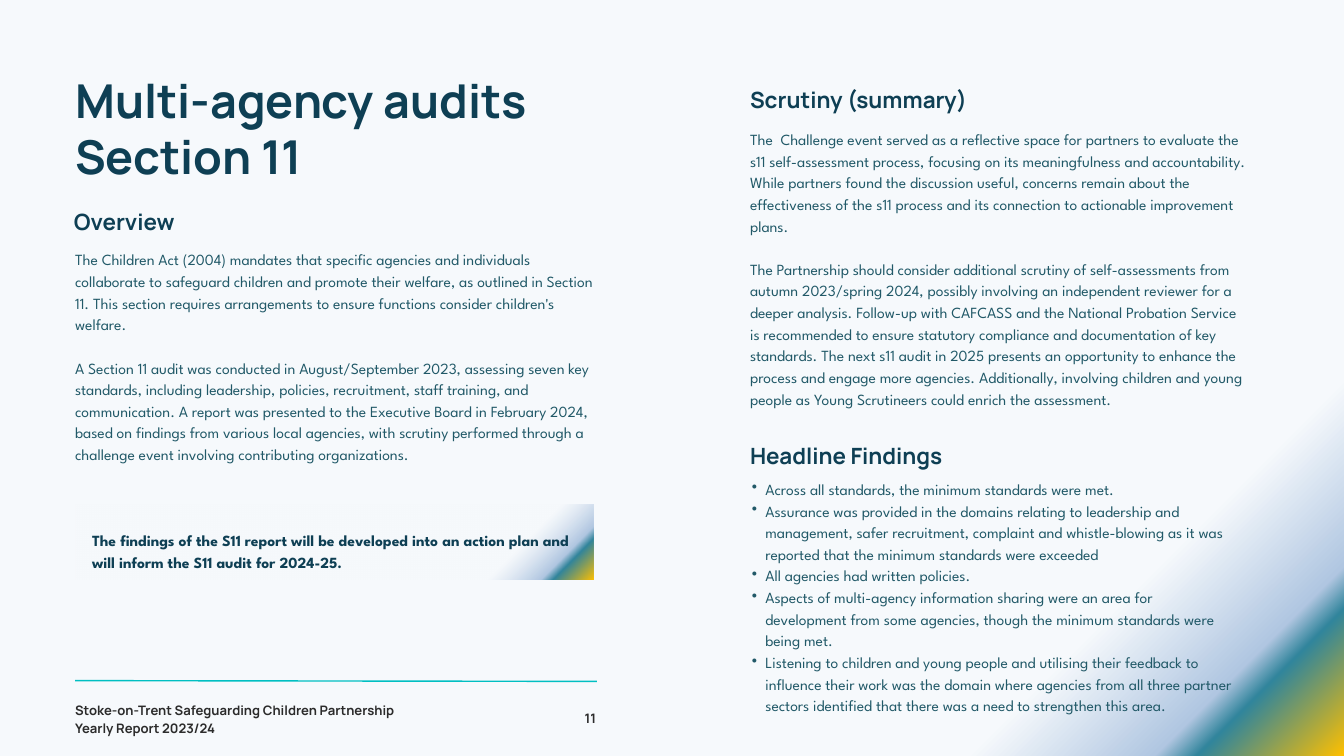
import pptx
import pptx.util
import pptx.dml.color
import pptx.enum.shapes
import pptx.enum.text
import pptx.oxml
import pptx.oxml.ns
from dataclasses import dataclass

Cm, Pt = pptx.util.Cm, pptx.util.Pt


@dataclass(frozen=True)
class Style:
    face: str
    size: float
    lead: float
    ink: str
    bold: bool


class Theme:
    title = Style("Manrope", 50, 60, "0E3F54", True)
    head = Style("Manrope", 24, 28.8, "0E3F54", True)
    body = Style("League Spartan", 16.6, 23.2, "215968", False)
    call = Style("League Spartan", 16.6, 23.2, "0E3F54", True)
    foot = Style("Manrope", 14, 19.6, "2B2B2B", True)
    rule = "01BFC2"
    # Position, colour and opacity in percent, from the lower right corner
    glow = [(0, "FFC000", 100), (7, "31859C", 100),
            (9, "B0C6E1", 100), (18, "F6F9FC", 65)]


def paint(fill, root):
    """Fill with the corner glow."""
    fill.gradient()
    grad = root.find(".//" + pptx.oxml.ns.qn("a:gradFill"))
    stops = "".join(
        f'<a:gs pos="{pos * 1000}"><a:srgbClr val="{ink}">'
        f'<a:alpha val="{alpha * 1000}"/></a:srgbClr></a:gs>'
        for pos, ink, alpha in Theme.glow)
    new = pptx.oxml.parse_xml(
        f'<a:gradFill {pptx.oxml.ns.nsdecls("a")} rotWithShape="1">'
        f'<a:gsLst>{stops}</a:gsLst><a:path path="circle">'
        '<a:fillToRect l="100000" t="100000"/></a:path></a:gradFill>')
    grad.getparent().replace(grad, new)


def write(area, style, lines, gap=0, dots=False, right=False):
    """Place a text box with one paragraph per line."""
    box = slide.shapes.add_textbox(*map(Cm, area))
    frame = box.text_frame
    frame.word_wrap = True
    frame.auto_size = pptx.enum.text.MSO_AUTO_SIZE.SHAPE_TO_FIT_TEXT
    frame.margin_left = frame.margin_right = 0
    frame.margin_top = frame.margin_bottom = 0
    for num, line in enumerate(lines):
        para = frame.add_paragraph() if num else frame.paragraphs[0]
        para.line_spacing = Pt(style.lead)
        if num and gap:
            para.space_before = Pt(gap)
        if right:
            para.alignment = pptx.enum.text.PP_ALIGN.RIGHT
        if dots:
            props = para._p.get_or_add_pPr()
            props.set("marL", str(Cm(0.99)))
            props.set("indent", str(Cm(-0.51)))
            props.append(pptx.oxml.parse_xml(
                f'<a:buChar {pptx.oxml.ns.nsdecls("a")} char="•"/>'))
        run = para.add_run()
        run.text = line
        run.font.name = style.face
        run.font.size = Pt(style.size)
        run.font.bold = style.bold
        run.font.color.rgb = pptx.dml.color.RGBColor.from_string(style.ink)


deck = pptx.Presentation()
deck.slide_width, deck.slide_height = Cm(50.8), Cm(28.58)
slide = deck.slides.add_slide(deck.slide_layouts[6])
paint(slide.background.fill, slide.element)

# Column edges
left, mid = 2.84, 28.35

# Footer rule
rule = slide.shapes.add_connector(
    pptx.enum.shapes.MSO_CONNECTOR.STRAIGHT,
    Cm(left), Cm(25.73), Cm(22.56), Cm(25.76))
rule.line.color.rgb = pptx.dml.color.RGBColor.from_string(Theme.rule)
rule.line.width = Pt(1.5)
rule.element.spPr.append(pptx.oxml.parse_xml(
    f'<a:effectLst {pptx.oxml.ns.nsdecls("a")}/>'))

# Callout panel
panel = slide.shapes.add_shape(
    pptx.enum.shapes.MSO_SHAPE.RECTANGLE,
    Cm(left), Cm(19.08), Cm(19.61), Cm(2.84))
panel.shadow.inherit = False
panel.line.fill.background()
paint(panel.fill, panel.element)
write((3.48, 19.96, 18.36, 1.57), Theme.call, [
    "The findings of the S11 report will be developed into an action plan "
    "and will inform the S11 audit for 2024-25."])

# Title and overview
write((left, 2.72, 21.77, 4.37), Theme.title,
      ["Multi-agency audits", "Section 11"])
write((2.79, 7.85, 19.61, 1.07), Theme.head, ["Overview"])
write((left, 9.35, 19.69, 8.99), Theme.body, [
    "The Children Act (2004) mandates that specific agencies and individuals "
    "collaborate to safeguard children and promote their welfare, as outlined "
    "in Section 11. This section requires arrangements to ensure functions "
    "consider children's welfare.",
    "A Section 11 audit was conducted in August/September 2023, assessing "
    "seven key standards, including leadership, policies, recruitment, staff "
    "training, and communication. A report was presented to the Executive "
    "Board in February 2024, based on findings from various local agencies, "
    "with scrutiny performed through a challenge event involving contributing "
    "organizations."], gap=Theme.body.lead)

# Scrutiny
write((mid, 3.25, 21.77, 1.07), Theme.head, ["Scrutiny (summary)"])
write((mid, 4.8, 18.82, 11.46), Theme.body, [
    "The  Challenge event served as a reflective space for partners to "
    "evaluate the s11 self-assessment process, focusing on its meaningfulness "
    "and accountability. While partners found the discussion useful, concerns "
    "remain about the effectiveness of the s11 process and its connection to "
    "actionable improvement plans.",
    "The Partnership should consider additional scrutiny of self-assessments "
    "from autumn 2023/spring 2024, possibly involving an independent reviewer "
    "for a deeper analysis. Follow-up with CAFCASS and the National Probation "
    "Service is recommended to ensure statutory compliance and documentation "
    "of key standards. The next s11 audit in 2025 presents an opportunity to "
    "enhance the process and engage more agencies. Additionally, involving "
    "children and young people as Young Scrutineers could enrich the "
    "assessment."], gap=Theme.body.lead)

# Headline findings
write((mid, 16.71, 19.61, 1.02), Theme.head, ["Headline Findings"])
write((27.94, 18.03, 18.8, 9.8), Theme.body, [
    "Across all standards, the minimum standards were met.",
    "Assurance was provided in the domains relating to leadership and "
    "management, safer recruitment, complaint and whistle-blowing as it was "
    "reported that the minimum standards were exceeded",
    "All agencies had written policies.",
    "Aspects of multi-agency information sharing were an area for development "
    "from some agencies, though the minimum standards were being met.",
    "Listening to children and young people and utilising their feedback to "
    "influence their work was the domain where agencies from all three "
    "partner sectors identified that there was a need to strengthen this "
    "area."], dots=True)

# Footer
write((left, 26.44, 13.92, 1.4), Theme.foot,
      ["Stoke-on-Trent Safeguarding Children Partnership",
       "Yearly Report 2023/24"])
write((19.63, 26.75, 2.9, 0.69), Theme.foot, ["11"], right=True)

deck.save("out.pptx")
